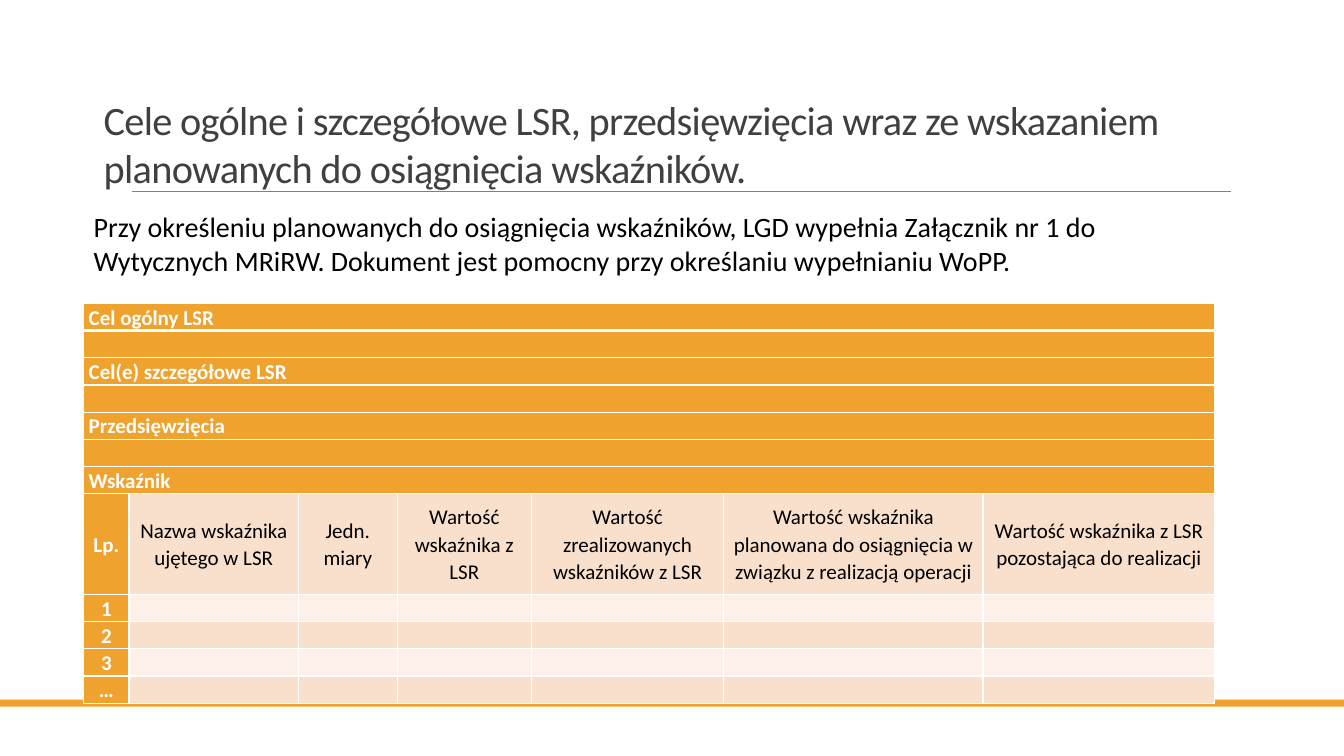
"""Build a slide with LSR goals and a table of planned indicators."""
from lxml.etree import SubElement as Sub
from pptx import Presentation
from pptx.dml.color import RGBColor as RGB
from pptx.enum.shapes import MSO_CONNECTOR as Link, MSO_SHAPE as Shape
from pptx.enum.text import MSO_ANCHOR as Anchor, PP_ALIGN as Align
from pptx.oxml.ns import qn
from pptx.util import Inches, Pt


class Theme:
    font = "Calibri"
    orange, peach, cream = "F0A22E", "F9E0CD", "FCF0E8"
    white, black, dark, gray = "FFFFFF", "000000", "404040", "808080"
    title, body, cell = 28.8, 20, 15


def put(frame, text, size=Theme.cell, color=Theme.black, bold=False,
        align=Align.LEFT, before=6, lines=1.0, track=0):
    frame.word_wrap = True
    para = frame.paragraphs[0]
    para.alignment = align
    para.space_before = Pt(before)
    para.line_spacing = lines
    if not text:
        Sub(para._p, qn("a:endParaRPr"), sz=str(int(size * 100)))
        return
    run = para.add_run()
    run.text = text
    font = run.font
    font.name, font.size, font.bold = Theme.font, Pt(size), bold
    font.color.rgb = RGB.from_string(color)
    if track:
        run._r.get_or_add_rPr().set("spc", str(int(track * 100)))


def edge(cell, top=1, bottom=1):
    props = cell._tc.get_or_add_tcPr()
    for side, width in (("L", 1), ("R", 1), ("T", top), ("B", bottom)):
        line = Sub(props, qn("a:ln" + side), w=str(Pt(width)))
        fill = Sub(line, qn("a:solidFill"))
        Sub(fill, qn("a:srgbClr"), val=Theme.white)


deck = Presentation()
deck.slide_width, deck.slide_height = Inches(13.33), Inches(7.5)
slide = deck.slides.add_slide(deck.slide_layouts[6])
shapes = slide.shapes

bar = shapes.add_shape(Shape.RECTANGLE, 0, Inches(6.94), Inches(13.33), Inches(0.07))
bar.shadow.inherit = False
bar.fill.solid()
bar.fill.fore_color.rgb = RGB.from_string(Theme.orange)
bar.line.fill.background()

rule = shapes.add_connector(Link.STRAIGHT, Inches(1.31), Inches(1.9), Inches(12.21), Inches(1.9))
rule.line.color.rgb = RGB.from_string(Theme.gray)
rule.line.width = Pt(0.5)
Sub(rule._element.spPr, qn("a:effectLst"))

title = shapes.add_textbox(Inches(0.93), Inches(1.02), Inches(11.33), Inches(0.8))
title.text_frame.vertical_anchor = Anchor.MIDDLE
put(title.text_frame,
    "Cele ogólne i szczegółowe LSR, przedsięwzięcia wraz ze wskazaniem "
    "planowanych do osiągnięcia wskaźników.",
    size=Theme.title, color=Theme.dark, before=0, track=-0.5)

heads = ["Cel ogólny LSR", "", "Cel(e) szczegółowe LSR", "", "Przedsięwzięcia", "", "Wskaźnik"]
names = [
    "Lp.",
    "Nazwa wskaźnika ujętego w LSR",
    "Jedn. miary",
    "Wartość wskaźnika z LSR",
    "Wartość zrealizowanych wskaźników z LSR",
    "Wartość wskaźnika planowana do osiągnięcia w związku z realizacją operacji",
    "Wartość wskaźnika z LSR pozostająca do realizacji",
]
widths = [0.45, 1.68, 0.98, 1.33, 1.91, 2.57, 2.3]
blank = [""] * (len(names) - 1)
rows = [[head] + blank for head in heads] + [names]
rows += [[mark] + blank for mark in ("1", "2", "3", "…")]

grid = shapes.add_table(len(rows), len(names), Inches(0.83), Inches(3.01),
                        Inches(11.22), Inches(3.94)).table
for col, width in zip(grid.columns, widths):
    col.width = Inches(width)
for r, texts in enumerate(rows):
    grid.rows[r].height = Inches(1 if texts is names else 0.27)
    wide = r < len(heads)
    if wide:
        grid.cell(r, 0).merge(grid.cell(r, len(names) - 1))
    for c, text in enumerate(texts):
        cell = grid.cell(r, c)
        first = wide or c == 0
        band = Theme.peach if r % 2 else Theme.cream
        edge(cell, top=3 if r == 1 else 1, bottom=3 if r == 0 else 1)
        cell.fill.solid()
        cell.fill.fore_color.rgb = RGB.from_string(Theme.orange if first else band)
        cell.margin_left = cell.margin_right = Inches(0.05)
        cell.margin_top = cell.margin_bottom = 0
        cell.vertical_anchor = Anchor.TOP if wide else Anchor.MIDDLE
        put(cell.text_frame, text, color=Theme.white if first else Theme.black,
            bold=first, align=Align.LEFT if wide else Align.CENTER, lines=1.07)

note = shapes.add_textbox(Inches(0.83), Inches(2.03), Inches(11.44), Inches(0.77))
note.text_frame.vertical_anchor = Anchor.MIDDLE
put(note.text_frame,
    "Przy określeniu planowanych do osiągnięcia wskaźników, LGD wypełnia Załącznik nr 1 do "
    "Wytycznych MRiRW. Dokument jest pomocny przy określaniu wypełnianiu WoPP.",
    size=Theme.body)

deck.save("out.pptx")
